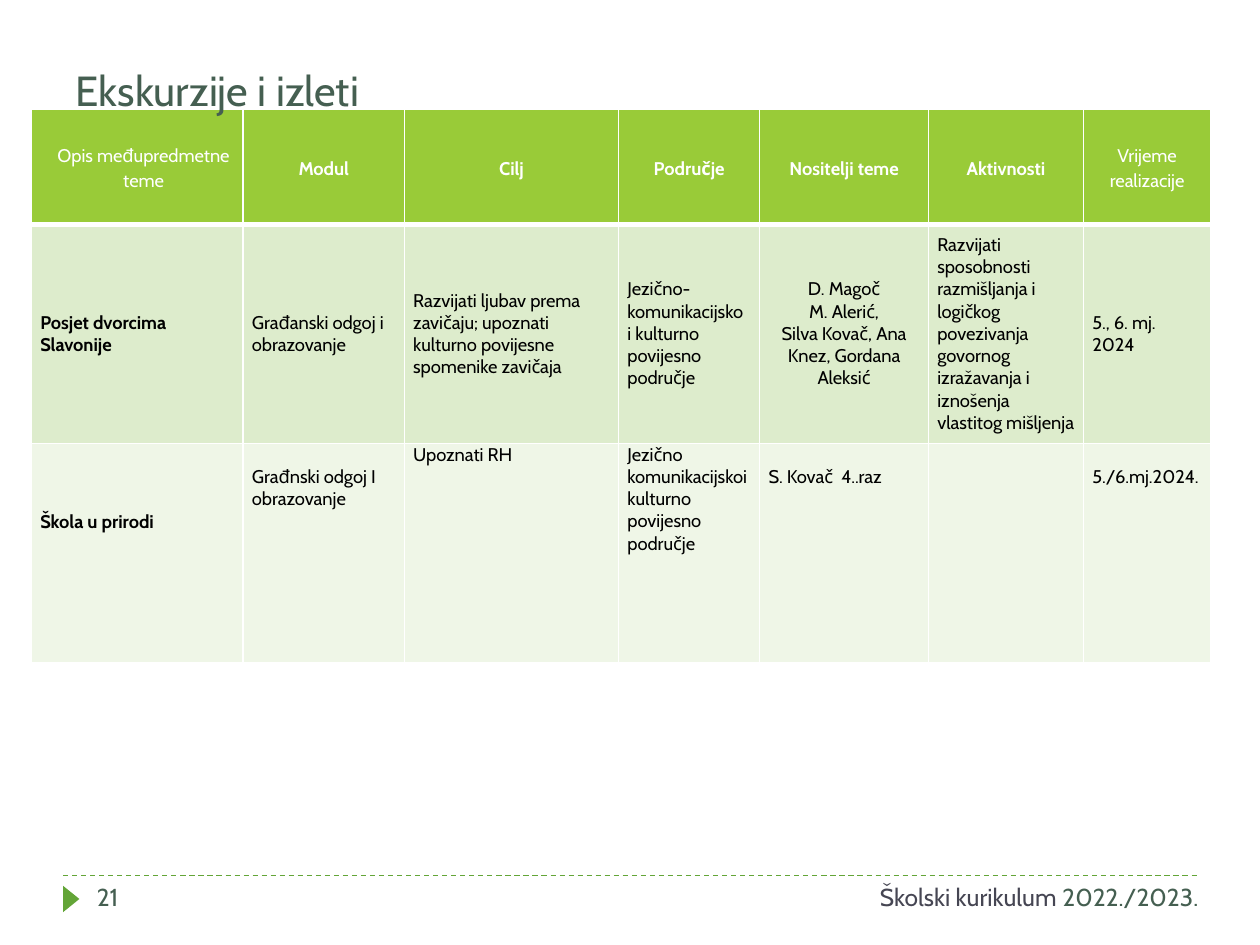
from lxml.etree import SubElement
from pptx import Presentation
from pptx.dml.color import RGBColor
from pptx.enum.dml import MSO_LINE
from pptx.enum.shapes import MSO_CONNECTOR, MSO_SHAPE
from pptx.enum.text import MSO_ANCHOR, PP_ALIGN
from pptx.oxml.ns import qn
from pptx.util import Inches, Pt

GREEN, DARK_GREEN, PLUM = "63A537", "455F51", "464653"
HEADER_FILL, ROW_FILLS = "99CB38", ("DDECCC", "EFF6E7")
LINE_HEIGHT = 12.75

COLUMN_WIDTHS = (1.68, 1.28, 1.7, 1.12, 1.34, 1.23, 1.01)
ROW_HEIGHTS = (0.91, 1.74, 1.74)
HEADINGS = ("Opis međupredmetne teme", "Modul", "Cilj", "Područje",
            "Nositelji teme", "Aktivnosti", "Vrijeme realizacije")
CASTLES = (
    "Posjet dvorcima Slavonije",
    "Građanski odgoj i obrazovanje",
    "Razvijati ljubav prema zavičaju; upoznati kulturno povijesne spomenike zavičaja",
    "Jezično-komunikacijsko i kulturno povijesno\npodručje",
    "D. Magoč\nM. Alerić,\nSilva Kovač, Ana Knez, Gordana Aleksić",
    "Razvijati sposobnosti razmišljanja i logičkog povezivanja\n"
    "govornog izražavanja i iznošenja vlastitog mišljenja",
    "5., 6. mj. 2024",
)
NATURE_SCHOOL = (
    "Škola u prirodi",
    "Građnski odgoj I obrazovanje",
    "Upoznati RH",
    "Jezično komunikacijskoi kulturno povijesno područje",
    "S. Kovač  4..raz",
    "",
    "5./6.mj.2024.",
)
NATURE_LINES_DOWN = (3, 1, 0, 0, 1, 0, 1)


def rgb(value):
    return RGBColor.from_string(value)


def apply(target, **formats):
    for name, value in formats.items():
        setattr(target, name, value)


class CurriculumSlide:
    """Holds the font and the slide, and draws each kind of element on it."""

    font = "Cabin"

    def __init__(self, deck):
        self.slide = deck.slides.add_slide(deck.slide_layouts[5])
        self.shapes = self.slide.shapes

    def fill_text(self, frame, paragraphs, size, bold=False,
                  align=PP_ALIGN.LEFT, spacing=1.0):
        for index, runs in enumerate(paragraphs):
            paragraph = frame.add_paragraph() if index else frame.paragraphs[0]
            apply(paragraph, alignment=align, line_spacing=spacing,
                  space_before=Pt(0), space_after=Pt(0))
            for words, color in runs:
                run = paragraph.add_run()
                run.text = words
                apply(run.font, name=self.font, size=Pt(size), bold=bold)
                run.font.color.rgb = rgb(color)

    def title(self, words, left, top, width, height):
        heading = self.shapes.title
        apply(heading, left=Inches(left), top=Inches(top),
              width=Inches(width), height=Inches(height))
        apply(heading.text_frame, vertical_anchor=MSO_ANCHOR.BOTTOM, word_wrap=True)
        self.fill_text(heading.text_frame, [[(words, DARK_GREEN)]], 24)
        heading.element.getparent().append(heading.element)

    def label(self, runs, left, top, width, height, align=PP_ALIGN.LEFT):
        box = self.shapes.add_textbox(*map(Inches, (left, top, width, height)))
        box.text_frame.word_wrap = True
        self.fill_text(box.text_frame, [runs], 14, align=align)

    def dashed_rule(self, left, right, top):
        rule = self.shapes.add_connector(
            MSO_CONNECTOR.STRAIGHT, *map(Inches, (left, top, right, top)))
        apply(rule.line, width=Pt(0.75), dash_style=MSO_LINE.DASH)
        rule.line.color.rgb = rgb(GREEN)
        SubElement(rule.element.spPr, qn("a:effectLst"))

    def marker(self, left, top, width, height):
        triangle = self.shapes.add_shape(
            MSO_SHAPE.ISOSCELES_TRIANGLE, *map(Inches, (left, top, width, height)))
        triangle.rotation = 90
        triangle.shadow.inherit = False
        triangle.fill.solid()
        triangle.fill.fore_color.rgb = rgb(GREEN)
        triangle.line.fill.background()

    def table(self, left, top):
        grid = self.shapes.add_table(
            len(ROW_HEIGHTS), len(COLUMN_WIDTHS), Inches(left), Inches(top),
            Inches(sum(COLUMN_WIDTHS)), Inches(sum(ROW_HEIGHTS))).table
        for column, width in zip(grid.columns, COLUMN_WIDTHS):
            column.width = Inches(width)
        for row, height in zip(grid.rows, ROW_HEIGHTS):
            row.height = Inches(height)
        return grid

    def cell(self, cell, words, fill, color="000000", borders=(1, 1, 1, 1),
             anchor=MSO_ANCHOR.MIDDLE, indent=0, lines_down=0, **style):
        apply(cell, vertical_anchor=anchor, margin_left=Inches(0.07 + indent),
              margin_right=Inches(0.07), margin_bottom=0,
              margin_top=Pt(lines_down * LINE_HEIGHT))
        properties = cell._tc.get_or_add_tcPr()
        for side, points in zip("LRTB", borders):
            edge = SubElement(properties, qn(f"a:ln{side}"), w=str(Pt(points)))
            paint = SubElement(edge, qn("a:solidFill"))
            SubElement(paint, qn("a:srgbClr"), val="FFFFFF")
        cell.fill.solid()
        cell.fill.fore_color.rgb = rgb(fill)
        if words:
            lines = [[(line, color)] for line in words.split("\n")]
            self.fill_text(cell.text_frame, lines, 10.5, **style)


def main():
    deck = Presentation()
    apply(deck, slide_width=Inches(10), slide_height=Inches(7.5))
    page = CurriculumSlide(deck)

    page.dashed_rule(0.5, 9.5, 6.95)
    page.marker(0.46, 7.07, 0.21, 0.13)
    page.label([("21", DARK_GREEN)], 0.67, 6.95, 2.17, 0.4)

    trips = page.table(0.25, 0.87)
    last = len(HEADINGS) - 1
    for column, heading in enumerate(HEADINGS):
        page.cell(trips.cell(0, column), heading, HEADER_FILL, "FFFFFF",
                  borders=(1, 1, 1, 3), indent=0 if column else 0.1,
                  bold=0 < column < last, align=PP_ALIGN.CENTER, spacing=1.15)
        page.cell(trips.cell(1, column), CASTLES[column], ROW_FILLS[0],
                  borders=(1, 1, 3, 1), bold=column == 0,
                  align=PP_ALIGN.CENTER if column == 4 else PP_ALIGN.LEFT)
        page.cell(trips.cell(2, column), NATURE_SCHOOL[column], ROW_FILLS[1],
                  anchor=MSO_ANCHOR.TOP, bold=column == 0,
                  lines_down=NATURE_LINES_DOWN[column])

    page.label([("Školski kurikulum ", PLUM), ("2022./2023.", DARK_GREEN)],
               5.78, 6.95, 3.83, 0.4, PP_ALIGN.RIGHT)
    page.title("Ekskurzije i izleti", 0.5, 0.58, 3.96, 0.38)
    deck.save("out.pptx")


if __name__ == "__main__":
    main()
